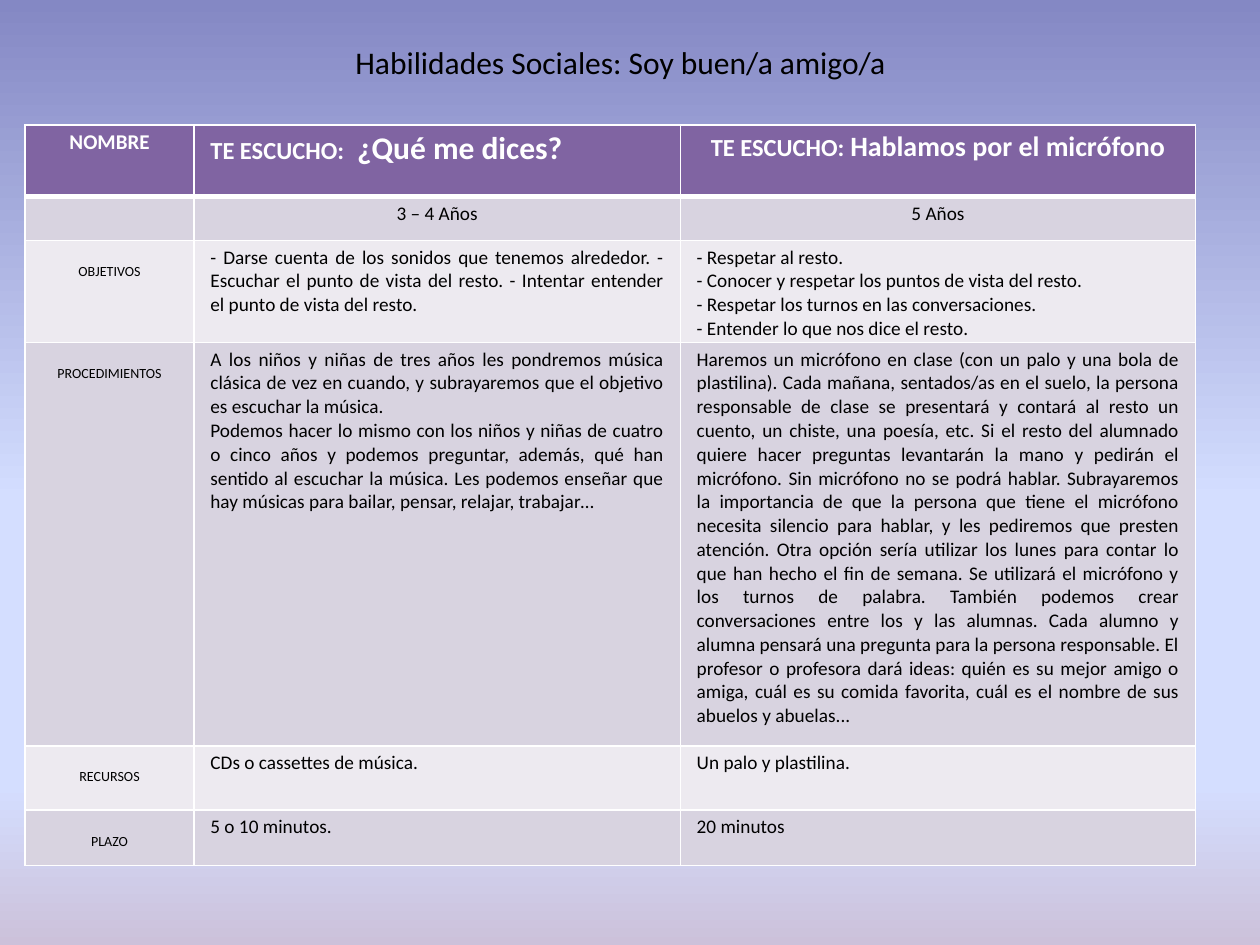
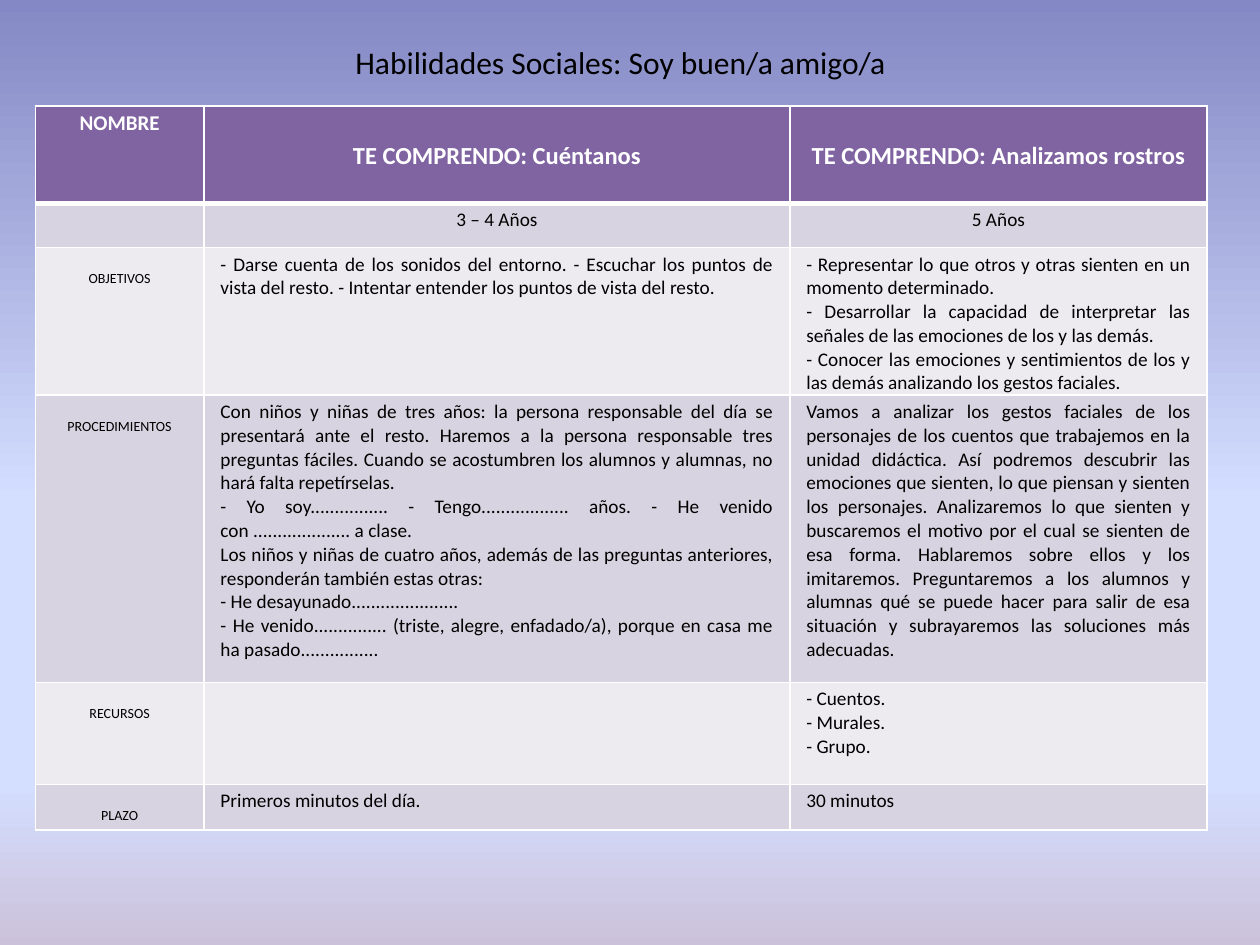
from copy import deepcopy

from lxml import etree
from pptx import Presentation
from pptx import util as u
from pptx.dml.color import RGBColor
from pptx.enum import text
from pptx.oxml.ns import qn

FONT = "Calibri"
BLACK, WHITE, PURPLE = "000000", "FFFFFF", "8064A2"
BANDS = ["D8D3E0", "EDEAF0"]
SKY = [(0, "8488C4"), (0.53, "D4DEFF"), (0.83, "D4DEFF"), (1, "CCC1DA")]
TITLE = "Habilidades Sociales: Soy buen/a amigo/a"
LABELS = ["NOMBRE", "", "OBJETIVOS", "PROCEDIMIENTOS", "RECURSOS", "PLAZO"]
AGES = ["3 – 4 Años", "5 Años"]
WIDE, HIGH = u.Inches(10), u.Inches(7.5)
LEFT, MID, FULL = (text.PP_ALIGN.LEFT, text.PP_ALIGN.CENTER,
                   text.PP_ALIGN.JUSTIFY)
SHORT = {(4, 1), (4, 2), (5, 2)}

MICRO = [
    "Haremos un micrófono en clase (con un palo y una bola de plastilina). "
    "Cada mañana, sentados/as en el suelo, la persona responsable de clase se "
    "presentará y contará al resto un cuento, un chiste, una poesía, etc. Si "
    "el resto del alumnado quiere hacer preguntas levantarán la mano y "
    "pedirán el micrófono. Sin micrófono no se podrá hablar.",
    "Subrayaremos la importancia de que la persona que tiene el micrófono "
    "necesita silencio para hablar, y les pediremos que presten atención. "
    "Otra opción sería utilizar los lunes para contar lo que han hecho el fin "
    "de semana. Se utilizará el micrófono y los turnos de palabra.",
    "También podemos crear conversaciones entre los y las alumnas. Cada alumno "
    "y alumna pensará una pregunta para la persona responsable. El profesor o "
    "profesora dará ideas: quién es su mejor amigo o amiga, cuál es su comida "
    "favorita, cuál es el nombre de sus abuelos y abuelas...",
]

# Header cells are lists of (text, size); other cells hold one paragraph a line.
LISTEN = [
    [[("TE ESCUCHO: ", 14), (" ¿Qué me dices?", 18)],
     [("TE ESCUCHO: ", 14), ("Hablamos por el micrófono", 16)]],
    AGES,
    ["- Darse cuenta de los sonidos que tenemos alrededor. - Escuchar el punto "
     "de vista del resto. - Intentar entender el punto de vista del resto.",
     "- Respetar al resto.\n"
     "- Conocer y respetar los puntos de vista del resto.\n"
     "- Respetar los turnos en las conversaciones.\n"
     "- Entender lo que nos dice el resto."],
    ["A los niños y niñas de tres años les pondremos música clásica de vez en "
     "cuando, y subrayaremos que el objetivo es escuchar la música.\n"
     "Podemos hacer lo mismo con los niños y niñas de cuatro o cinco años y "
     "podemos preguntar, además, qué han sentido al escuchar la música. Les "
     "podemos enseñar que hay músicas para bailar, pensar, relajar, trabajar…",
     " ".join(MICRO)],
    ["CDs o cassettes de música.", "Un palo y plastilina."],
    ["5 o 10 minutos.", "20 minutos"],
]
GRASP = [
    [[("TE COMPRENDO: Cuéntanos", 14)],
     [("TE COMPRENDO: Analizamos rostros", 14)]],
    AGES,
    ["- Darse cuenta de los sonidos del entorno. - Escuchar los puntos de "
     "vista del resto. - Intentar entender los puntos de vista del resto.",
     "- Representar lo que otros y otras sienten en un momento determinado.\n"
     "- Desarrollar la capacidad de interpretar las señales de las emociones "
     "de los y las demás.\n"
     "- Conocer las emociones y sentimientos de los y las demás analizando los "
     "gestos faciales."],
    ["Con niños y niñas de tres años: la persona responsable del día se "
     "presentará ante el resto. Haremos a la persona responsable tres "
     "preguntas fáciles. Cuando se acostumbren los alumnos y alumnas, no hará "
     "falta repetírselas.\n"
     "- Yo soy................ - Tengo.................. años. - He venido con "
     ".................... a clase.\n"
     "Los niños y niñas de cuatro años, además de las preguntas anteriores, "
     "responderán también estas otras:\n"
     "- He desayunado......................\n"
     "- He venido............... (triste, alegre, enfadado/a), porque en casa "
     "me ha pasado................",
     "Vamos a analizar los gestos faciales de los personajes de los cuentos "
     "que trabajemos en la unidad didáctica. Así podremos descubrir las "
     "emociones que sienten, lo que piensan y sienten los personajes. "
     "Analizaremos lo que sienten y buscaremos el motivo por el cual se "
     "sienten de esa forma. Hablaremos sobre ellos y los imitaremos. "
     "Preguntaremos a los alumnos y alumnas qué se puede hacer para salir de "
     "esa situación y subrayaremos las soluciones más adecuadas."],
    ["", "- Cuentos.\n- Murales.\n- Grupo."],
    ["Primeros minutos del día.", "30 minutos"],
]


def across(pct):
    return round(WIDE * pct / 100)


def down(pct):
    return round(HIGH * pct / 100)


def tint(code):
    return RGBColor.from_string(code)


def apply(item, form):
    for key, val in form.items():
        setattr(item, key, val)


def write(par, words, size, color=BLACK, bold=False):
    run = par.add_run()
    run.text = words
    apply(run.font, {"name": FONT, "size": u.Pt(size), "bold": bold})
    run.font.color.rgb = tint(color)


def paint_sky(master):
    fill = master.background.fill
    fill.gradient()
    fill.gradient_angle = 270
    stops = master.element.find(".//" + qn("a:gsLst"))
    while len(stops) < len(SKY):
        stops.append(deepcopy(stops[0]))
    for stop, (place, code) in zip(fill.gradient_stops, SKY):
        stop.position = place
        stop.color.rgb = tint(code)


def add_title(slide):
    title = slide.shapes.title
    apply(title, {"left": across(27.2), "top": down(3.87),
                  "width": across(48), "height": down(5.33)})
    frame = title.text_frame
    apply(frame, {"word_wrap": True, "auto_size": text.MSO_AUTO_SIZE.NONE,
                  "vertical_anchor": text.MSO_ANCHOR.TOP})
    par = frame.paragraphs[0]
    par.alignment = LEFT
    write(par, TITLE, 18)


def edge(cell, side, width):
    line = etree.SubElement(cell._tc.get_or_add_tcPr(), qn("a:ln" + side),
                            w=str(u.Pt(width)))
    fill = etree.SubElement(line, qn("a:solidFill"))
    etree.SubElement(fill, qn("a:srgbClr"), val=WHITE)


def style(cell, row, drop):
    """Set borders, band colour and margins; drop lowers the text."""
    thick = {"T": 3 if row == 1 else 1, "B": 3 if row == 0 else 1}
    for side in "LRTB":
        edge(cell, side, thick.get(side, 1))
    cell.fill.solid()
    cell.fill.fore_color.rgb = tint(BANDS[(row - 1) % 2] if row else PURPLE)
    apply(cell, {"margin_left": u.Inches(0.13), "margin_right": u.Inches(0.13),
                 "margin_top": u.Inches(0.04 + drop), "margin_bottom": 0})


def fill_cell(cell, lines, align, color, bold):
    frame = cell.text_frame
    for n, runs in enumerate(lines):
        par = frame.add_paragraph() if n else frame.paragraphs[0]
        par.alignment = align
        for words, size in runs:
            if words:
                write(par, words, size, color, bold)
            else:
                etree.SubElement(par._p, qn("a:endParaRPr"), sz=str(size * 100))


def add_plan(slide, spot, cols, rows, body, lefts, drop=0):
    """Add the lesson table; lefts holds left-aligned cells."""
    frame = slide.shapes.add_table(len(rows), len(cols), across(spot[0]),
                                   down(spot[1]), across(sum(cols)),
                                   down(sum(rows)))
    table = frame.table
    table.horz_banding = False
    for col, pct in zip(table.columns, cols):
        col.width = across(pct)
    for row, pct in zip(table.rows, rows):
        row.height = down(pct)
    for r, (label, pair) in enumerate(zip(LABELS, body)):
        for c, words in enumerate([label, *pair]):
            size = 11 if c else 8 if r else 12
            sink = (0 if r else drop) if c else 0.14 if r > 1 else 0
            align = MID if c == 0 or r < 2 else FULL
            if (r, c) in lefts:
                align = LEFT
            lines = ([words] if isinstance(words, list) else
                     [[(line, size)] for line in words.split("\n")])
            cell = table.cell(r, c)
            style(cell, r, sink)
            fill_cell(cell, lines, align, BLACK if r else WHITE, r == 0)


def main():
    deck = Presentation()
    apply(deck, {"slide_width": WIDE, "slide_height": HIGH})
    paint_sky(deck.slide_master)
    plans = [
        ((2, 13.2), (13.4, 38.6, 40.9), (7.6, 4.67, 10.8, 42.67, 6.8, 5.87),
         LISTEN, SHORT | {(0, 1), (2, 2)}),
        ((2.8, 11.2), (13.4, 46.5, 33.1), (10.33, 4.67, 15.6, 30.4, 10.8, 4.8),
         GRASP, SHORT, 0.24),
    ]
    for plan in plans:
        slide = deck.slides.add_slide(deck.slide_layouts[5])
        add_title(slide)
        add_plan(slide, *plan)
    deck.save("out.pptx")


if __name__ == "__main__":
    main()
